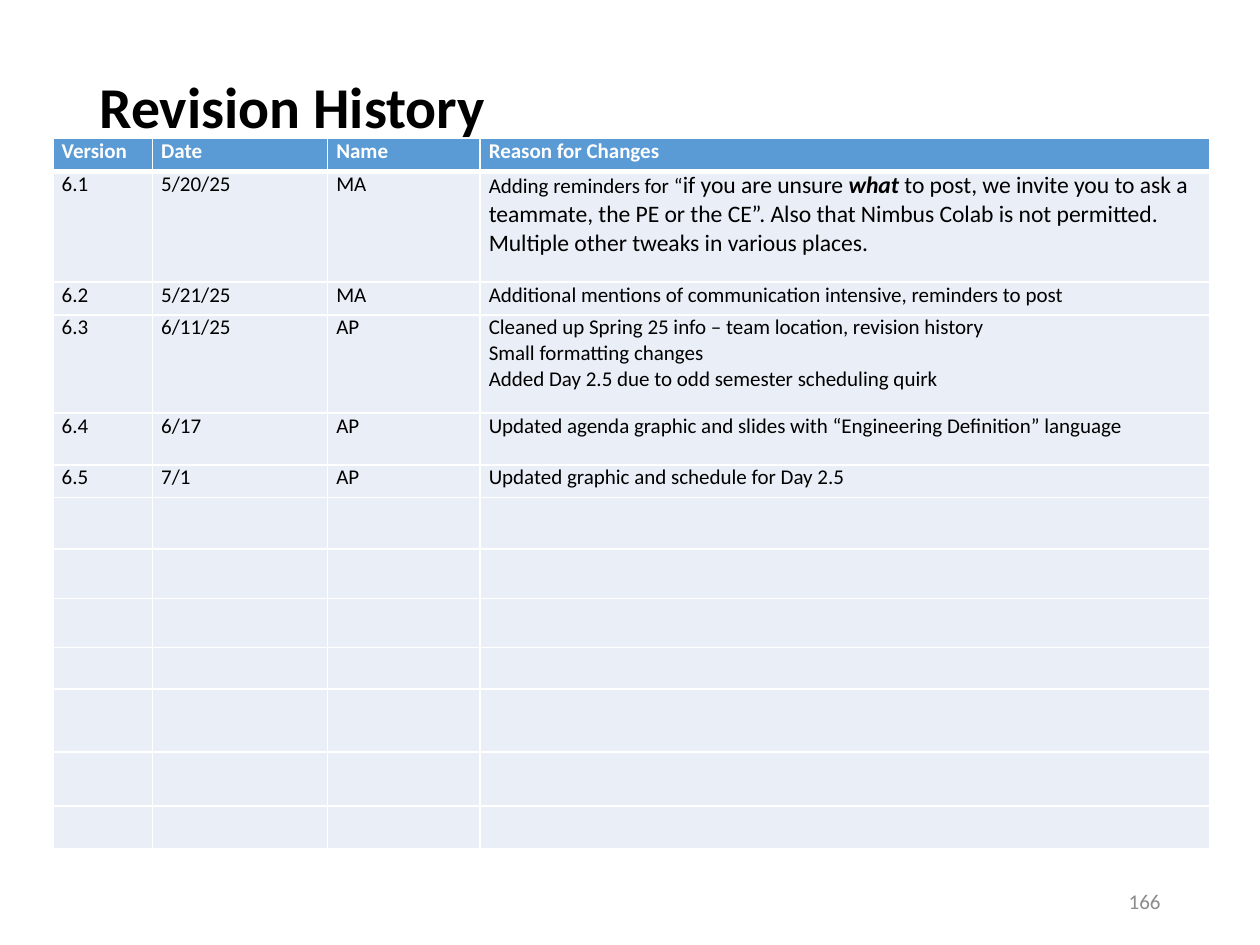
import pptx
import pptx.util
import pptx.dml.color
import pptx.enum.text
import pptx.oxml
import pptx.oxml.ns

Inches, Pt = pptx.util.Inches, pptx.util.Pt
Anchor, Align = pptx.enum.text.MSO_ANCHOR, pptx.enum.text.PP_ALIGN

HUES = {"head": "5B9BD5", "row": "EAEFF7", "line": "FFFFFF",
        "text": "000000", "page": "8C8C8C"}
TITLE = "Revision History"
PAGE = "166"
HEADS = ["Version", "Date", "Name", "Reason for Changes"]
BIG = {"size": Pt(13.5)}
STRONG = {"size": Pt(13.5), "bold": True, "italic": True}
ROWS = [
    ["6.1", "5/20/25", "MA", [[
        ("Adding reminders for “", {}),
        ("if you are unsure ", BIG),
        ("what", STRONG),
        (" to post, we invite you to ask a teammate, the PE or the CE”. "
         "Also that Nimbus Colab is not permitted. "
         "Multiple other tweaks in various places.", BIG)]]],
    ["6.2", "5/21/25", "MA",
     "Additional mentions of communication intensive, reminders to post"],
    ["6.3", "6/11/25", "AP", [
        [("Cleaned up Spring 25 info – team location, revision history", {})],
        [("Small formatting changes", {})],
        [("Added Day 2.5 due to odd semester scheduling quirk", {})]]],
    ["6.4", "6/17", "AP",
     "Updated agenda graphic and slides with “Engineering Definition” language"],
    ["6.5", "7/1", "AP", "Updated graphic and schedule for Day 2.5"],
]
WIDTHS = [0.79, 1.39, 1.21, 5.79]
HEIGHTS = [0.26, 0.88, 0.26, 0.78, 0.41, 0.26, 0.41,
           0.39, 0.39, 0.33, 0.5, 0.43, 0.34]
INSETS = {"margin_left": Inches(0.07), "margin_right": Inches(0.07),
          "margin_top": 0, "margin_bottom": 0}


def rgb(name):
    return pptx.dml.color.RGBColor.from_string(HUES[name])


def assign(item, values):
    for key, value in values.items():
        setattr(item, key, value)


def style(font, hue, **values):
    assign(font, {"name": "Calibri", "size": Pt(12), "bold": False, **values})
    font.color.rgb = rgb(hue)


def write(frame, text, hue, **base):
    paras = [[(text, {})]] if isinstance(text, str) else text
    for i, runs in enumerate(paras):
        para = frame.paragraphs[0] if i == 0 else frame.add_paragraph()
        for words, extra in runs:
            run = para.add_run()
            run.text = words
            style(run.font, hue, **{**base, **extra})


def border(cell, row):
    props = cell._tc.get_or_add_tcPr()
    wide = {"T": 3 if row == 1 else 1, "B": 3 if row == 0 else 1}
    for i, side in enumerate("LRTB"):
        line = pptx.oxml.parse_xml(
            f'<a:ln{side} {pptx.oxml.ns.nsdecls("a")} w="{Pt(wide.get(side, 1))}">'
            f'<a:solidFill><a:srgbClr val="{HUES["line"]}"/></a:solidFill>'
            f'</a:ln{side}>')
        props.insert(i, line)


def add_title(slide):
    title = slide.shapes.title
    assign(title, {"left": Inches(0.69), "top": Inches(0.4),
                   "width": Inches(8.62), "height": Inches(1.45)})
    frame = title.text_frame
    assign(frame, {"auto_size": pptx.enum.text.MSO_AUTO_SIZE.NONE,
                   "vertical_anchor": Anchor.MIDDLE,
                   "margin_bottom": Inches(0.55)})
    assign(frame.paragraphs[0], {"alignment": Align.LEFT, "line_spacing": 0.9})
    write(frame, TITLE, "text", size=Pt(33), bold=True)


def add_grid(slide):
    grid = slide.shapes.add_table(
        len(HEIGHTS), len(WIDTHS), Inches(0.42), Inches(1.1),
        Inches(sum(WIDTHS)), Inches(sum(HEIGHTS))).table
    for col, width in zip(grid.columns, WIDTHS):
        col.width = Inches(width)
    lines = [HEADS] + ROWS
    for r, height in enumerate(HEIGHTS):
        grid.rows[r].height = Inches(height)
        for c in range(len(WIDTHS)):
            cell = grid.cell(r, c)
            assign(cell, INSETS)
            cell.fill.solid()
            cell.fill.fore_color.rgb = rgb("row" if r else "head")
            border(cell, r)
            if r < len(lines):
                write(cell.text_frame, lines[r][c],
                      "text" if r else "line", bold=r == 0)


def add_page(slide):
    box = slide.shapes.add_textbox(Inches(7.06), Inches(6.95),
                                   Inches(2.25), Inches(0.4))
    frame = box.text_frame
    assign(frame, {"word_wrap": True, "vertical_anchor": Anchor.MIDDLE})
    frame.paragraphs[0].alignment = Align.RIGHT
    write(frame, PAGE, "page")


def main():
    deck = pptx.Presentation()
    assign(deck, {"slide_width": Inches(10), "slide_height": Inches(7.5)})
    slide = deck.slides.add_slide(deck.slide_layouts[5])
    add_title(slide)
    add_grid(slide)
    add_page(slide)
    deck.save("out.pptx")


if __name__ == "__main__":
    main()
